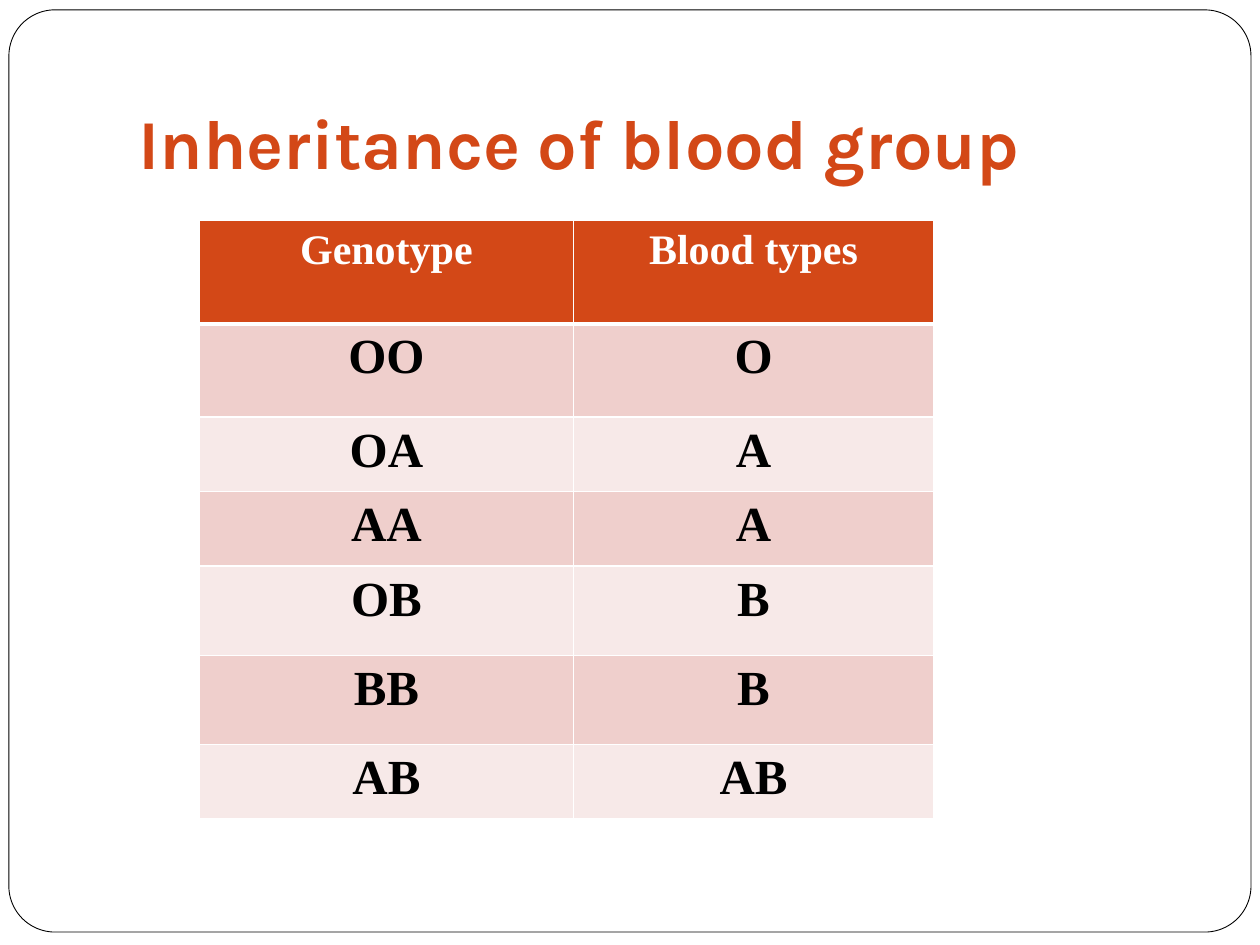
from lxml import etree
from pptx import Presentation
from pptx.dml.color import RGBColor
from pptx.enum.shapes import MSO_SHAPE
from pptx.enum.text import MSO_ANCHOR, PP_ALIGN
from pptx.oxml.ns import qn
from pptx.util import Cm, Pt

ROUNDED_RECTANGLE = MSO_SHAPE.ROUNDED_RECTANGLE
BOTTOM = MSO_ANCHOR.BOTTOM
LEFT = PP_ALIGN.LEFT
CENTER = PP_ALIGN.CENTER

ORANGE = RGBColor(0xD3, 0x48, 0x17)
DARK_PINK = RGBColor(0xEF, 0xCF, 0xCC)
LIGHT_PINK = RGBColor(0xF7, 0xE9, 0xE8)
WHITE = RGBColor(0xFF, 0xFF, 0xFF)
BLACK = RGBColor(0x00, 0x00, 0x00)

BLOOD_GROUPS = [
    ("Genotype", "Blood types"),
    ("OO", "O"),
    ("OA", "A"),
    ("AA", "A"),
    ("OB", "B"),
    ("BB", "B"),
    ("AB", "AB"),
]
COLUMN_WIDTHS = [7.54, 7.26]
ROW_HEIGHTS = [2.08, 1.88, 1.5, 1.5, 1.8, 1.8, 1.5]


class SlideBuilder:
    title_font = "Karla"
    table_font = "Times New Roman"

    def __init__(self, slide):
        self.slide = slide

    def format_text(self, text_frame, font_name, size, color, alignment):
        for paragraph in text_frame.paragraphs:
            paragraph.alignment = alignment
            for run in paragraph.runs:
                run.font.name = font_name
                run.font.size = Pt(size)
                run.font.bold = True
                run.font.color.rgb = color

    def add_frame(self, left, top, width, height):
        shape = self.slide.shapes.add_shape(
            ROUNDED_RECTANGLE, Cm(left), Cm(top), Cm(width), Cm(height)
        )
        shape.adjustments[0] = 0.05
        shape.shadow.inherit = False
        shape.fill.solid()
        shape.fill.fore_color.rgb = WHITE
        shape.line.color.rgb = BLACK
        shape.line.width = Pt(0.5)

    def add_title(self, text, left, top, width, height):
        shape = self.slide.shapes.add_textbox(Cm(left), Cm(top), Cm(width), Cm(height))
        text_frame = shape.text_frame
        text_frame.word_wrap = True
        text_frame.vertical_anchor = BOTTOM
        text_frame.margin_bottom = Cm(0.25)
        text_frame.text = text
        self.format_text(text_frame, self.title_font, 40, ORANGE, LEFT)

    def add_border(self, cell, side, width):
        properties = cell._tc.get_or_add_tcPr()
        line = etree.SubElement(properties, qn(f"a:{side}"), w=str(Pt(width)))
        fill = etree.SubElement(line, qn("a:solidFill"))
        etree.SubElement(fill, qn("a:srgbClr"), val=str(WHITE))

    def format_cell(self, cell, row):
        is_header = row == 0
        self.add_border(cell, "lnL", 1)
        self.add_border(cell, "lnR", 1)
        self.add_border(cell, "lnT", 3 if row == 1 else 1)
        self.add_border(cell, "lnB", 3 if is_header else 1)
        band = DARK_PINK if row % 2 else LIGHT_PINK
        cell.fill.solid()
        cell.fill.fore_color.rgb = ORANGE if is_header else band
        size, color = (24, WHITE) if is_header else (28, BLACK)
        self.format_text(cell.text_frame, self.table_font, size, color, CENTER)

    def add_table(self, rows, left, top, column_widths, row_heights):
        table = self.slide.shapes.add_table(
            len(rows), len(column_widths), Cm(left), Cm(top),
            Cm(sum(column_widths)), Cm(sum(row_heights)),
        ).table
        for column, width in zip(table.columns, column_widths):
            column.width = Cm(width)
        for row, (values, height) in enumerate(zip(rows, row_heights)):
            table.rows[row].height = Cm(height)
            for column, value in enumerate(values):
                cell = table.cell(row, column)
                cell.text_frame.text = value
                self.format_cell(cell, row)


def main():
    presentation = Presentation()
    presentation.slide_width = Cm(25.4)
    presentation.slide_height = Cm(19.05)
    builder = SlideBuilder(presentation.slides.add_slide(presentation.slide_layouts[6]))
    builder.add_frame(0.18, 0.2, 25.04, 18.59)
    builder.add_title("Inheritance of blood group", 2.54, 0.76, 21.59, 3.18)
    builder.add_table(BLOOD_GROUPS, 4.02, 4.45, COLUMN_WIDTHS, ROW_HEIGHTS)
    presentation.save("out.pptx")


if __name__ == "__main__":
    main()
